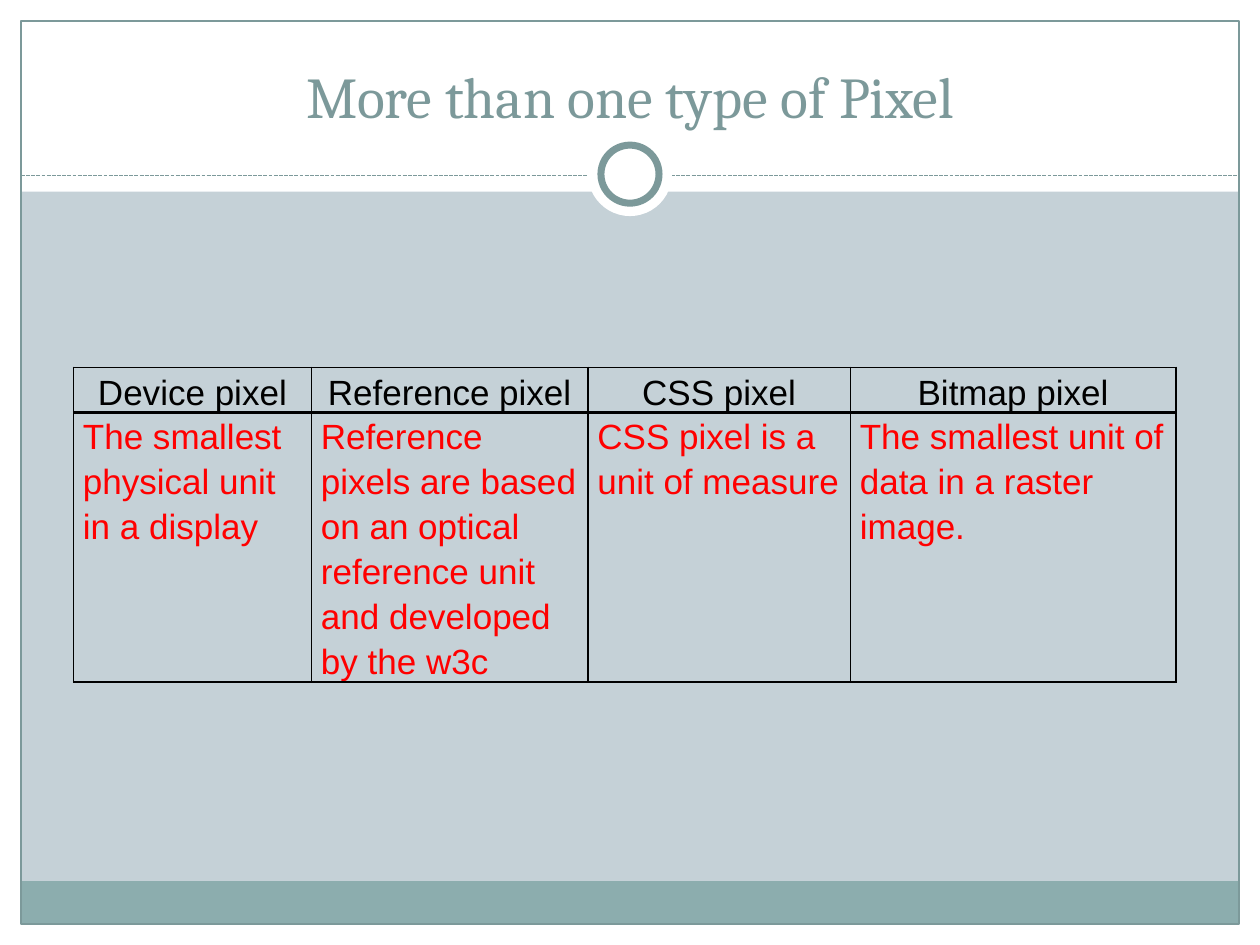
from lxml import etree
from pptx import Presentation
from pptx.dml.color import RGBColor
from pptx.enum import dml, shapes, text
from pptx.oxml.ns import qn
from pptx.util import Pt

HUES = {"back": "C5D1D7", "white": "FFFFFF", "band": "8CADAE",
        "sage": "7C999A", "black": "000000", "red": "FF0000"}
WIDE, HIGH, EDGE = 720, 540, 12


def hue(name):
    return RGBColor.from_string(HUES[name])


class Deck:
    head, body = "Cambria", "Arial"

    def __init__(self):
        self.prs = Presentation()
        self.prs.slide_width, self.prs.slide_height = Pt(WIDE), Pt(HIGH)
        self.slide = self.prs.slides.add_slide(self.prs.slide_layouts[5])
        fill = self.slide.background.fill
        fill.solid()
        fill.fore_color.rgb = hue("back")

    def shape(self, kind, box, fill=None, line=None, width=0.75):
        item = self.slide.shapes.add_shape(kind, *map(Pt, box))
        item.shadow.inherit = False
        if fill:
            item.fill.solid()
            item.fill.fore_color.rgb = hue(fill)
        else:
            item.fill.background()
        if line:
            item.line.color.rgb = hue(line)
            item.line.width = Pt(width)
        else:
            item.line.fill.background()

    def rect(self, *box, **style):
        self.shape(shapes.MSO_SHAPE.RECTANGLE, box, **style)

    def disc(self, x, y, size, **style):
        """Draw a circle around the centre x, y."""
        box = (x - size / 2, y - size / 2, size, size)
        self.shape(shapes.MSO_SHAPE.OVAL, box, **style)

    def rule(self, left, right, y):
        line = self.slide.shapes.add_connector(
            shapes.MSO_CONNECTOR.STRAIGHT, Pt(left), Pt(y), Pt(right), Pt(y))
        line.line.color.rgb = hue("sage")
        line.line.width = Pt(0.75)
        line.line.dash_style = dml.MSO_LINE.SQUARE_DOT
        etree.SubElement(line._element.spPr, qn("a:effectLst"))

    def label(self, frame, words, size, font, color, align):
        para = frame.paragraphs[0]
        para.alignment = align
        run = para.add_run()
        run.text = words
        run.font.size, run.font.name = Pt(size), font
        run.font.bold = False
        run.font.color.rgb = hue(color)
        return para

    def title(self, words, *box):
        item = self.slide.shapes.title
        item.left, item.top, item.width, item.height = map(Pt, box)
        frame = item.text_frame
        frame.auto_size = text.MSO_AUTO_SIZE.NONE
        frame.vertical_anchor = text.MSO_ANCHOR.BOTTOM
        self.label(frame, words, 33, self.head, "sage", text.PP_ALIGN.CENTER)
        # Bring the title in front of the white bands.
        item._element.getparent().append(item._element)

    def border(self, cell, sides):
        props = cell._tc.get_or_add_tcPr()
        for spot, (side, width) in enumerate(sides.items()):
            line = etree.Element(qn("a:ln" + side), w=str(Pt(width)))
            fill = etree.SubElement(line, qn("a:solidFill"))
            etree.SubElement(fill, qn("a:srgbClr"), val=HUES["black"])
            props.insert(spot, line)

    def table(self, left, top, cols, rows, data):
        grid = self.slide.shapes.add_table(
            len(rows), len(cols), Pt(left), Pt(top),
            Pt(sum(cols)), Pt(sum(rows))).table
        grid.first_row = grid.horz_banding = False
        for col, width in zip(grid.columns, cols):
            col.width = Pt(width)
        for r, (high, line) in enumerate(zip(rows, data)):
            grid.rows[r].height = Pt(high)
            for c, words in enumerate(line):
                self.cell(grid.cell(r, c), words, r == 0)

    def cell(self, cell, words, head):
        cell.fill.background()
        cell.margin_left = cell.margin_right = Pt(5.4)
        cell.margin_top = cell.margin_bottom = 0
        color, align = (("black", text.PP_ALIGN.CENTER) if head
                        else ("red", text.PP_ALIGN.LEFT))
        para = self.label(cell.text_frame, words, 20, self.body, color, align)
        para.line_spacing, para.space_after = 1.15, Pt(10)
        self.border(cell, {"L": 1, "R": 1, "T": 1 if head else 2.25,
                           "B": 2.25 if head else 1})


def main():
    deck = Deck()
    inner, foot = WIDE - 2 * EDGE, HIGH - EDGE
    deck.rect(0, foot, WIDE, EDGE, fill="white")
    deck.rect(0, 0, WIDE, 109.5, fill="white")
    for x in (0, WIDE - EDGE):
        deck.rect(x, 0, EDGE, HIGH, fill="white")
    deck.rect(EDGE, 503.5, inner, foot - 503.5, fill="band")
    deck.rect(EDGE, EDGE, inner, foot - EDGE, line="sage")
    deck.rule(EDGE, WIDE - EDGE, 100.5)
    deck.disc(WIDE / 2, 99.5, 48, fill="white")
    deck.disc(WIDE / 2, 99.5, 33.2, fill="white", line="sage", width=4)
    deck.title("More than one type of Pixel", 24, 18, 672, 60)
    deck.table(42, 210, (136, 158, 150, 186), (25.7, 154), (
        ("Device pixel", "Reference pixel", "CSS pixel", "Bitmap pixel"),
        ("The smallest physical unit in a display",
         "Reference pixels are based on an optical reference unit "
         "and developed by the w3c",
         "CSS pixel is a unit of measure",
         "The smallest unit of data in a raster image.")))
    deck.prs.save("out.pptx")


if __name__ == "__main__":
    main()
